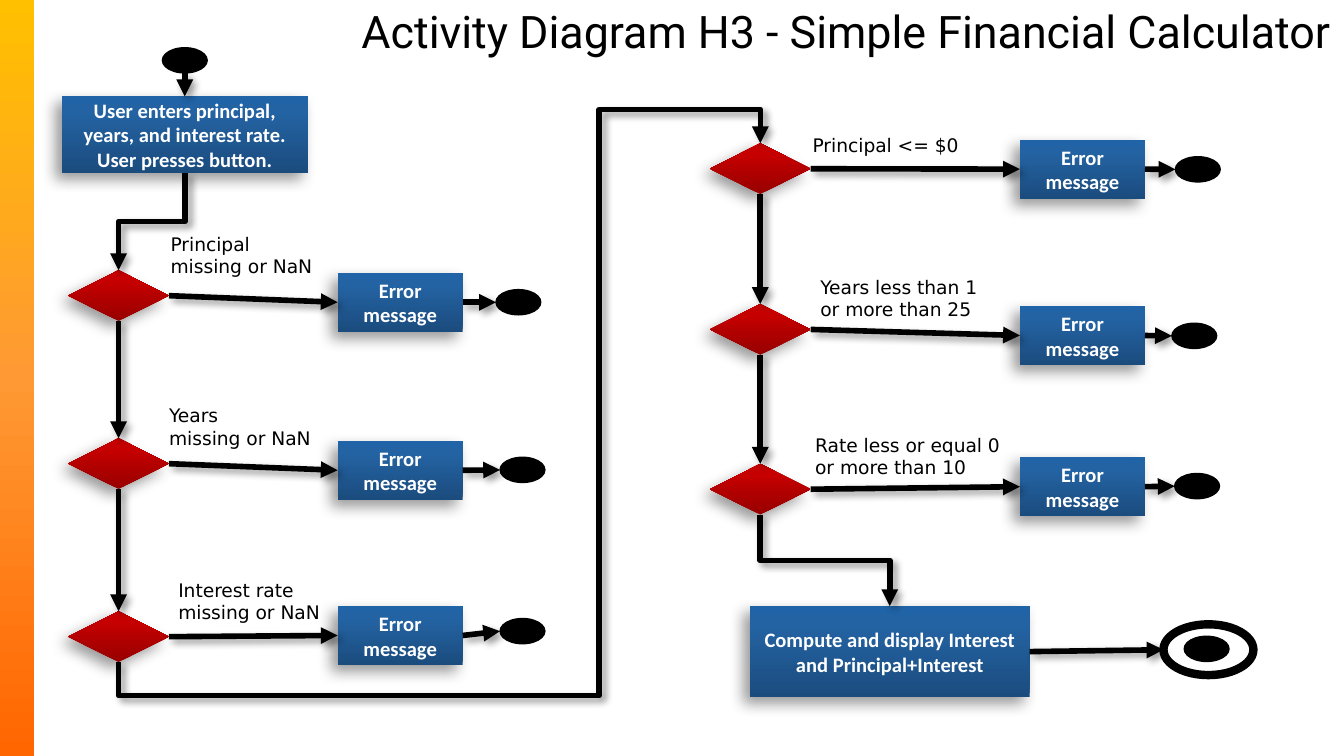
from dataclasses import dataclass
from itertools import pairwise

from pptx import Presentation
from pptx.dml.color import RGBColor
from pptx.enum.shapes import MSO_CONNECTOR, MSO_SHAPE
from pptx.enum.text import MSO_ANCHOR, MSO_AUTO_SIZE, PP_ALIGN
from pptx.oxml import parse_xml
from pptx.oxml.ns import nsdecls, qn
from pptx.shapes.autoshape import Shape
from pptx.shapes.connector import Connector
from pptx.slide import Slide
from pptx.text.text import TextFrame
from pptx.util import Pt

BLACK, WHITE = "000000", "FFFFFF"
BLUE = ((0, "1B4C7E"), (80, "2363A3"), (100, "2063A6"))
RED = ((0, "980000"), (80, "C60000"), (100, "C70000"))
ORANGE = ((0, "FFC000"), (50, "FF9933"), (100, "FF6600"))
TOP, LEFT, BOTTOM, RIGHT = range(4)
SIDES = {TOP: (0.5, 0), LEFT: (0, 0.5), BOTTOM: (0.5, 1), RIGHT: (1, 0.5)}


@dataclass(frozen=True)
class Box:
    left: float
    top: float
    width: float
    height: float

    def emu(self) -> tuple[Pt, ...]:
        return Pt(self.left), Pt(self.top), Pt(self.width), Pt(self.height)


@dataclass(frozen=True)
class Check:
    decision_top: float
    error_top: float
    end_left: float
    end_top: float
    label: str
    label_box: Box


@dataclass(frozen=True)
class Column:
    decision_left: float
    error_left: float
    checks: tuple[Check, ...]


INPUT_CHECKS = Column(36.5, 180.9, (
    Check(144.8, 146.2, 265.7, 155.2, "Principal\nmissing or NaN", Box(84.3, 121, 95, 31.7)),
    Check(234.8, 236.2, 267.9, 245, "Years\nmissing or NaN", Box(83.5, 212.9, 95, 31.7)),
    Check(327.5, 324.7, 267.9, 331.4, "Interest rate\nmissing or NaN", Box(88.4, 306.6, 95, 31.7)),
))
RANGE_CHECKS = Column(380.3, 546.4, (
    Check(76.8, 74.9, 629.7, 84, "Principal <= $0", Box(428.3, 68.1, 100, 19.4)),
    Check(162.9, 164, 627.8, 173.2, "Years less than 1\nor more than 25", Box(432.4, 144.1, 108, 31.7)),
    Check(248.5, 245, 629.3, 253.7, "Rate less or equal 0\nor more than 10", Box(429.6, 228.7, 121, 31.7)),
))


def rgb(value: str) -> RGBColor:
    return RGBColor.from_string(value)


def write(frame: TextFrame, text: str, *, font: str, size: float, color: str,
          bold: bool = False, align: PP_ALIGN = PP_ALIGN.LEFT,
          anchor: MSO_ANCHOR = MSO_ANCHOR.TOP) -> None:
    frame.word_wrap = True
    frame.vertical_anchor = anchor
    paragraph = frame.paragraphs[0]
    paragraph.text = text
    paragraph.alignment = align
    for run in paragraph.runs:
        run.font.name = font
        run.font.size = Pt(size)
        run.font.bold = bold
        run.font.color.rgb = rgb(color)


def add_shadow(part: Shape | Connector, blur: float, distance: float, angle: int) -> None:
    properties = part._element.spPr
    for effects in properties.findall(qn("a:effectLst")):
        properties.remove(effects)
    properties.append(parse_xml(
        f'<a:effectLst {nsdecls("a")}><a:outerShdw blurRad="{Pt(blur)}" dist="{Pt(distance)}" '
        f'dir="{angle * 60000}" rotWithShape="0"><a:srgbClr val="{BLACK}">'
        '<a:alpha val="40000"/></a:srgbClr></a:outerShdw></a:effectLst>'))


def add_gradient_shape(slide: Slide, kind: MSO_SHAPE, box: Box,
                       stops: tuple[tuple[int, str], ...], angle: int = 270) -> Shape:
    shape = slide.shapes.add_shape(kind, *box.emu())
    colors = "".join(f'<a:gs pos="{place * 1000}"><a:srgbClr val="{color}"/></a:gs>'
                     for place, color in stops)
    shape._element.spPr.find(qn("a:prstGeom")).addnext(parse_xml(
        f'<a:gradFill {nsdecls("a")} rotWithShape="1"><a:gsLst>{colors}</a:gsLst>'
        f'<a:lin ang="{angle * 60000}" scaled="0"/></a:gradFill>'))
    shape.line.fill.background()
    shape.shadow.inherit = False
    return shape


def add_action(slide: Slide, text: str, box: Box) -> Shape:
    action = add_gradient_shape(slide, MSO_SHAPE.FLOWCHART_PROCESS, box, BLUE)
    add_shadow(action, 8, 5, 135)
    frame = action.text_frame
    frame.margin_left = frame.margin_right = frame.margin_top = frame.margin_bottom = Pt(7.2)
    write(frame, text, font="Calibri", size=11, color=WHITE, bold=True,
          align=PP_ALIGN.CENTER, anchor=MSO_ANCHOR.MIDDLE)
    return action


def add_oval(slide: Slide, box: Box, fill: str = BLACK, line_width: float = 0.75) -> Shape:
    oval = slide.shapes.add_shape(MSO_SHAPE.OVAL, *box.emu())
    oval.fill.solid()
    oval.fill.fore_color.rgb = rgb(fill)
    oval.line.color.rgb = rgb(BLACK)
    oval.line.width = Pt(line_width)
    oval.shadow.inherit = False
    return oval


def add_terminal(slide: Slide, left: float, top: float) -> Shape:
    return add_oval(slide, Box(left, top, 24, 13.5))


def site(shape: Shape, side: int) -> tuple[int, int]:
    across, down = SIDES[side]
    return int(shape.left + shape.width * across), int(shape.top + shape.height * down)


def add_arrow(slide: Slide, source: Shape, source_side: int, target: Shape, target_side: int,
              kind: MSO_CONNECTOR = MSO_CONNECTOR.STRAIGHT) -> Connector:
    arrow = slide.shapes.add_connector(
        kind, *site(source, source_side), *site(target, target_side))
    if source.auto_shape_type != MSO_SHAPE.OVAL:
        arrow.begin_connect(source, source_side)
    if target.auto_shape_type != MSO_SHAPE.OVAL:
        arrow.end_connect(target, target_side)
    arrow.line.color.rgb = rgb(BLACK)
    arrow.line.width = Pt(3)
    arrow._element.spPr.find(qn("a:ln")).append(
        parse_xml(f'<a:tailEnd {nsdecls("a")} type="triangle"/>'))
    add_shadow(arrow, 4, 3, 45)
    return arrow


def add_bent_arrow(slide: Slide, source: Shape, target: Shape, rotation: int, flips: str,
                   bends: tuple[int, ...]) -> None:
    arrow = add_arrow(slide, source, BOTTOM, target, TOP, MSO_CONNECTOR.ELBOW)
    (x1, y1), (x2, y2) = site(source, BOTTOM), site(target, TOP)
    width, height = abs(y2 - y1), abs(x2 - x1)
    arrow.left, arrow.top = (x1 + x2 - width) // 2, (y1 + y2 - height) // 2
    arrow.width, arrow.height = width, height
    frame = arrow._element.spPr.find(qn("a:xfrm"))
    frame.set("rot", str(rotation * 60000))
    for flip in "HV":
        frame.set(f"flip{flip}", str(int(flip in flips)))
    guides = "".join(f'<a:gd name="adj{number}" fmla="val {bend}"/>'
                     for number, bend in enumerate(bends, 1))
    geometry = arrow._element.spPr.find(qn("a:prstGeom"))
    geometry.getparent().replace(geometry, parse_xml(
        f'<a:prstGeom {nsdecls("a")} prst="bentConnector{len(bends) + 2}">'
        f'<a:avLst>{guides}</a:avLst></a:prstGeom>'))


def add_column(slide: Slide, column: Column) -> list[Shape]:
    decisions = []
    for check in column.checks:
        decision = add_gradient_shape(slide, MSO_SHAPE.FLOWCHART_DECISION,
                                      Box(column.decision_left, check.decision_top, 54, 27.2), RED)
        add_shadow(decision, 8, 5, 135)
        error = add_action(slide, "Error message", Box(column.error_left, check.error_top, 67, 31.5))
        end = add_terminal(slide, check.end_left, check.end_top)
        add_arrow(slide, decision, RIGHT, error, LEFT)
        add_arrow(slide, error, RIGHT, end, LEFT)
        label = slide.shapes.add_textbox(*check.label_box.emu())
        write(label.text_frame, check.label, font="DejaVu Sans", size=10, color=BLACK)
        label.text_frame.auto_size = MSO_AUTO_SIZE.SHAPE_TO_FIT_TEXT
        decisions.append(decision)
    for upper, lower in pairwise(decisions):
        add_arrow(slide, upper, BOTTOM, lower, TOP)
    return decisions


def main() -> None:
    deck = Presentation()
    deck.slide_width, deck.slide_height = Pt(720), Pt(405)
    slide = deck.slides.add_slide(deck.slide_layouts[5])
    add_gradient_shape(slide, MSO_SHAPE.RECTANGLE, Box(0, 0, 18.2, 405), ORANGE, 90)

    title = slide.shapes.title
    title.left, title.top, title.width, title.height = Box(30.2, 0, 689.8, 33).emu()
    title.text_frame.margin_top = title.text_frame.margin_bottom = Pt(0)
    write(title.text_frame, "Activity Diagram H3 - Simple Financial Calculator", font="Roboto",
          size=24, color=BLACK, align=PP_ALIGN.RIGHT, anchor=MSO_ANCHOR.MIDDLE)

    start = add_terminal(slide, 87, 25.6)
    entry = add_action(slide, "User enters principal, years, and interest rate. "
                       "User presses button.", Box(33.1, 51.6, 131.8, 41))
    input_decisions = add_column(slide, INPUT_CHECKS)
    range_decisions = add_column(slide, RANGE_CHECKS)
    result = add_action(slide, "Compute and display Interest and Principal+Interest",
                        Box(401.8, 324.7, 149.8, 48.8))
    finish = add_oval(slide, Box(623.3, 334.5, 48.2, 27.2), WHITE, 4.5)
    add_terminal(slide, 634.4, 340.9)

    add_arrow(slide, start, BOTTOM, entry, TOP)
    add_bent_arrow(slide, entry, input_decisions[0], 90, "", (50000,))
    add_bent_arrow(slide, input_decisions[-1], range_decisions[0], 90, "HV", (-6500, 74900, 106500))
    add_bent_arrow(slide, range_decisions[-1], result, 270, "H", (50000,))
    add_arrow(slide, result, RIGHT, finish, LEFT)
    deck.save("out.pptx")


if __name__ == "__main__":
    main()
